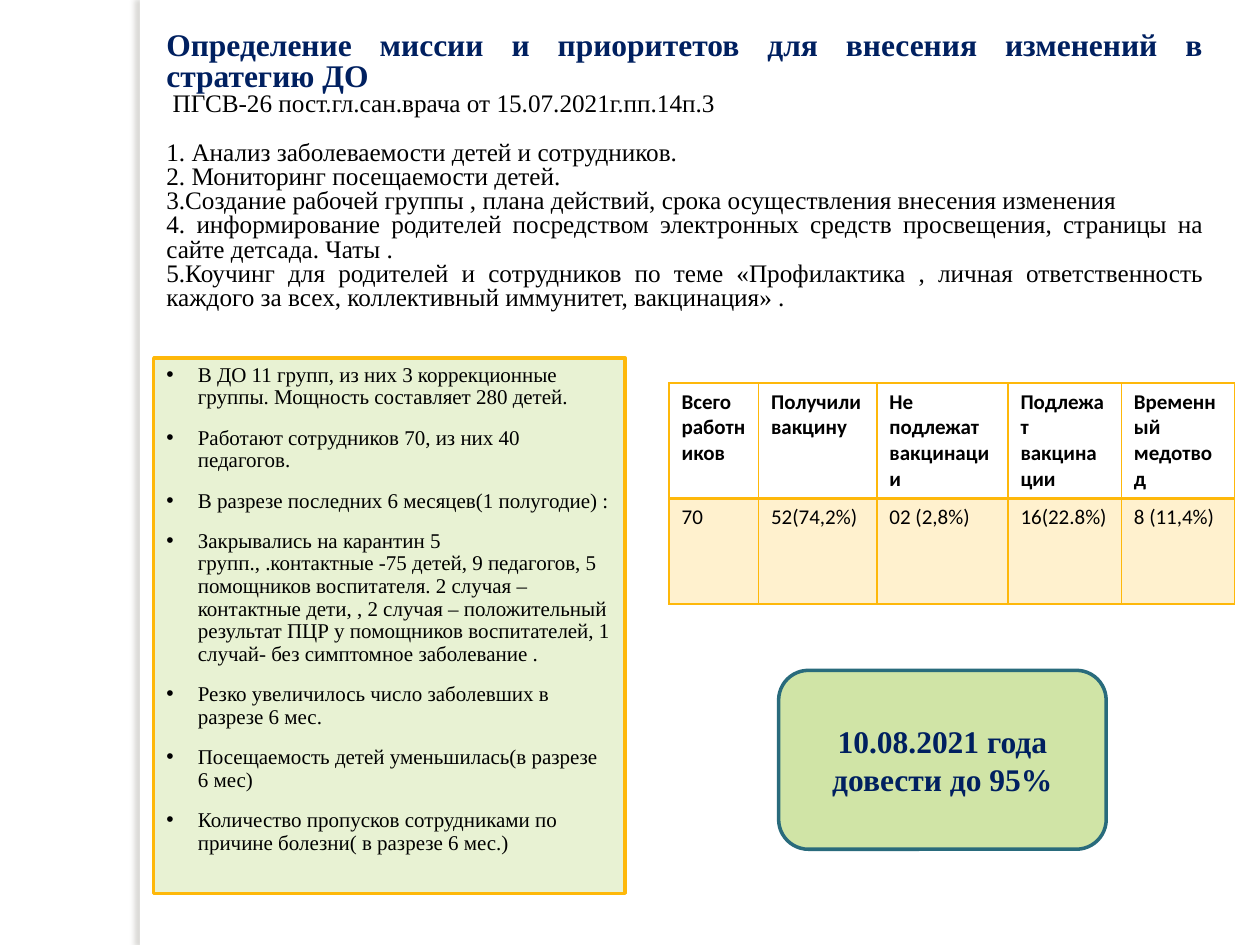
from dataclasses import dataclass

from pptx import Presentation
from pptx import util as u
from pptx.dml.color import RGBColor
from pptx.enum import shapes, text
from pptx.oxml import parse_xml
from pptx.oxml.ns import nsdecls

COLORS = {
    "white": "FFFFFF", "black": "000000", "navy": "002060", "gold": "FEB80A",
    "cream": "FFF1CE", "pale_green": "E8F2D3", "green": "D0E4A6",
    "teal": "296B7C", "shadow": "736F63",
}
SERIF = "Times New Roman"
LEFT, JUSTIFY = text.PP_ALIGN.LEFT, text.PP_ALIGN.JUSTIFY


@dataclass
class Line:
    text: str
    size: float = 14.4
    color: str = "black"
    bold: bool = False
    align: text.PP_ALIGN = JUSTIFY
    after: float = 0


@dataclass
class Box:
    left: float
    top: float
    width: float
    height: float

    def lengths(self) -> list:
        return [u.Inches(v) for v in (self.left, self.top, self.width, self.height)]


HEADING = [
    Line("Определение миссии и приоритетов для внесения изменений в стратегию ДО",
         18, "navy", True),
    Line(" ПГСВ-26 пост.гл.сан.врача от 15.07.2021г.пп.14п.3", align=LEFT, after=14),
    Line("1. Анализ заболеваемости детей и сотрудников.", align=LEFT),
    Line("2. Мониторинг посещаемости детей."),
    Line("3.Создание рабочей группы , плана действий, срока осуществления внесения изменения"),
    Line("4. информирование родителей посредством электронных средств просвещения, "
         "страницы на сайте детсада. Чаты ."),
    Line("5.Коучинг для родителей и сотрудников по теме «Профилактика , личная "
         "ответственность каждого за всех, коллективный иммунитет, вакцинация» ."),
]
FACTS = [
    "В ДО 11 групп, из них 3 коррекционные группы. Мощность составляет 280 детей.",
    "Работают сотрудников 70, из них 40 педагогов.",
    "В разрезе последних 6 месяцев(1 полугодие) :",
    "Закрывались на карантин 5 групп., .контактные -75 детей, 9 педагогов, "
    "5 помощников воспитателя. 2 случая – контактные дети, , 2 случая – положительный "
    "результат ПЦР у помощников воспитателей, 1 случай- без симптомное заболевание .",
    "Резко увеличилось число заболевших в разрезе 6 мес.",
    "Посещаемость детей уменьшилась(в разрезе 6 мес)",
    "Количество пропусков сотрудниками по причине болезни( в разрезе 6 мес.)",
]
VACCINATION = [
    ["Всего работников", "Получили вакцину", "Не подлежат вакцинации",
     "Подлежат вакцинации", "Временный медотвод"],
    ["70", "52(74,2%)", "02 (2,8%)", "16(22.8%)", "8 (11,4%)"],
]
COL_WIDTHS = [0.71, 0.94, 1.04, 0.9, 0.9]
ROW_HEIGHTS = [0.79, 0.84]


def rgb(name: str) -> RGBColor:
    return RGBColor.from_string(COLORS[name])


def add_run(p, content: str, size: float, color: str = "black",
            bold: bool = False, font: str = SERIF) -> None:
    r = p.add_run()
    r.text = content
    r.font.name, r.font.size, r.font.bold = font, u.Pt(size), bold
    r.font.color.rgb = rgb(color)


def place(sp, box: Box) -> None:
    sp.left, sp.top, sp.width, sp.height = box.lengths()


def paint(sp, fill: str, line: str) -> None:
    sp.fill.solid()
    sp.fill.fore_color.rgb = rgb(fill)
    sp.line.color.rgb = rgb(line)
    sp.line.width = u.Pt(2)


def next_paragraph(tf, index: int):
    return tf.add_paragraph() if index else tf.paragraphs[0]


def add_side_strip(s) -> None:
    sp = s.shapes.add_shape(shapes.MSO_SHAPE.RECTANGLE, *Box(1.11, 0, 0.08, 7.5).lengths())
    sp.fill.solid()
    sp.fill.fore_color.rgb = rgb("white")
    sp.line.fill.background()
    sp.element.spPr.append(parse_xml(
        f'<a:effectLst {nsdecls("a")}><a:outerShdw blurRad="{u.Pt(3)}" dist="{u.Pt(3)}" '
        f'dir="10800000" algn="tl" rotWithShape="0"><a:srgbClr val="{COLORS["shadow"]}">'
        '<a:alpha val="25000"/></a:srgbClr></a:outerShdw></a:effectLst>'))
    s.shapes.element.insert(2, sp.element)


def fill_heading(sp) -> None:
    place(sp, Box(1.22, 0.21, 8.43, 2.52))
    tf = sp.text_frame
    tf.auto_size = text.MSO_AUTO_SIZE.NONE
    tf.vertical_anchor = text.MSO_ANCHOR.TOP
    for i, line in enumerate(HEADING):
        p = next_paragraph(tf, i)
        p.alignment, p.line_spacing = line.align, 0.8
        p.space_after = u.Pt(line.after)
        add_run(p, line.text, line.size, line.color, line.bold)


def fill_facts(sp) -> None:
    place(sp, Box(1.22, 2.84, 3.74, 4.25))
    paint(sp, "pale_green", "gold")
    tf = sp.text_frame
    tf.auto_size = text.MSO_AUTO_SIZE.NONE
    for i, fact in enumerate(FACTS):
        p = next_paragraph(tf, i)
        p.line_spacing, p.space_before = 0.9, u.Pt(10)
        pPr = p._p.get_or_add_pPr()
        pPr.set("marL", str(u.Inches(0.25)))
        pPr.set("indent", str(u.Inches(-0.25)))
        add_run(p, fact, 12)


def add_border(cell, side: str, width: float) -> None:
    cell._tc.get_or_add_tcPr().append(parse_xml(
        f'<a:ln{side} {nsdecls("a")} w="{u.Pt(width)}"><a:solidFill>'
        f'<a:srgbClr val="{COLORS["gold"]}"/></a:solidFill></a:ln{side}>'))


def add_vaccination_table(s) -> None:
    box = Box(5.31, 3.04, sum(COL_WIDTHS), sum(ROW_HEIGHTS))
    tbl = s.shapes.add_table(len(VACCINATION), len(COL_WIDTHS), *box.lengths()).table
    for col, width in zip(tbl.columns, COL_WIDTHS):
        col.width = u.Inches(width)
    for i, values in enumerate(VACCINATION):
        tbl.rows[i].height = u.Inches(ROW_HEIGHTS[i])
        header = i == 0
        for j, value in enumerate(values):
            cell = tbl.cell(i, j)
            for side in "LRTB":
                middle = side == ("B" if header else "T")
                add_border(cell, side, 2 if middle else 1)
            if header:
                cell.fill.background()
            else:
                cell.fill.solid()
                cell.fill.fore_color.rgb = rgb("cream")
            add_run(cell.text_frame.paragraphs[0], value, 12, bold=header, font="Calibri")


def add_target(s) -> None:
    sp = s.shapes.add_shape(shapes.MSO_SHAPE.ROUNDED_RECTANGLE,
                            *Box(6.18, 5.32, 2.6, 1.42).lengths())
    sp.shadow.inherit = False
    paint(sp, "green", "teal")
    tf = sp.text_frame
    tf.word_wrap = True
    tf.vertical_anchor = text.MSO_ANCHOR.MIDDLE
    p = tf.paragraphs[0]
    p.alignment = text.PP_ALIGN.CENTER
    add_run(p, "10.08.2021 года довести до 95%", 18, "navy", True)


def main() -> None:
    prs = Presentation()
    prs.slide_width, prs.slide_height = u.Inches(10), u.Inches(7.5)
    s = prs.slides.add_slide(prs.slide_layouts[1])
    add_side_strip(s)
    fill_heading(s.shapes.title)
    fill_facts(s.placeholders[1])
    add_vaccination_table(s)
    add_target(s)
    prs.save("out.pptx")


if __name__ == "__main__":
    main()
